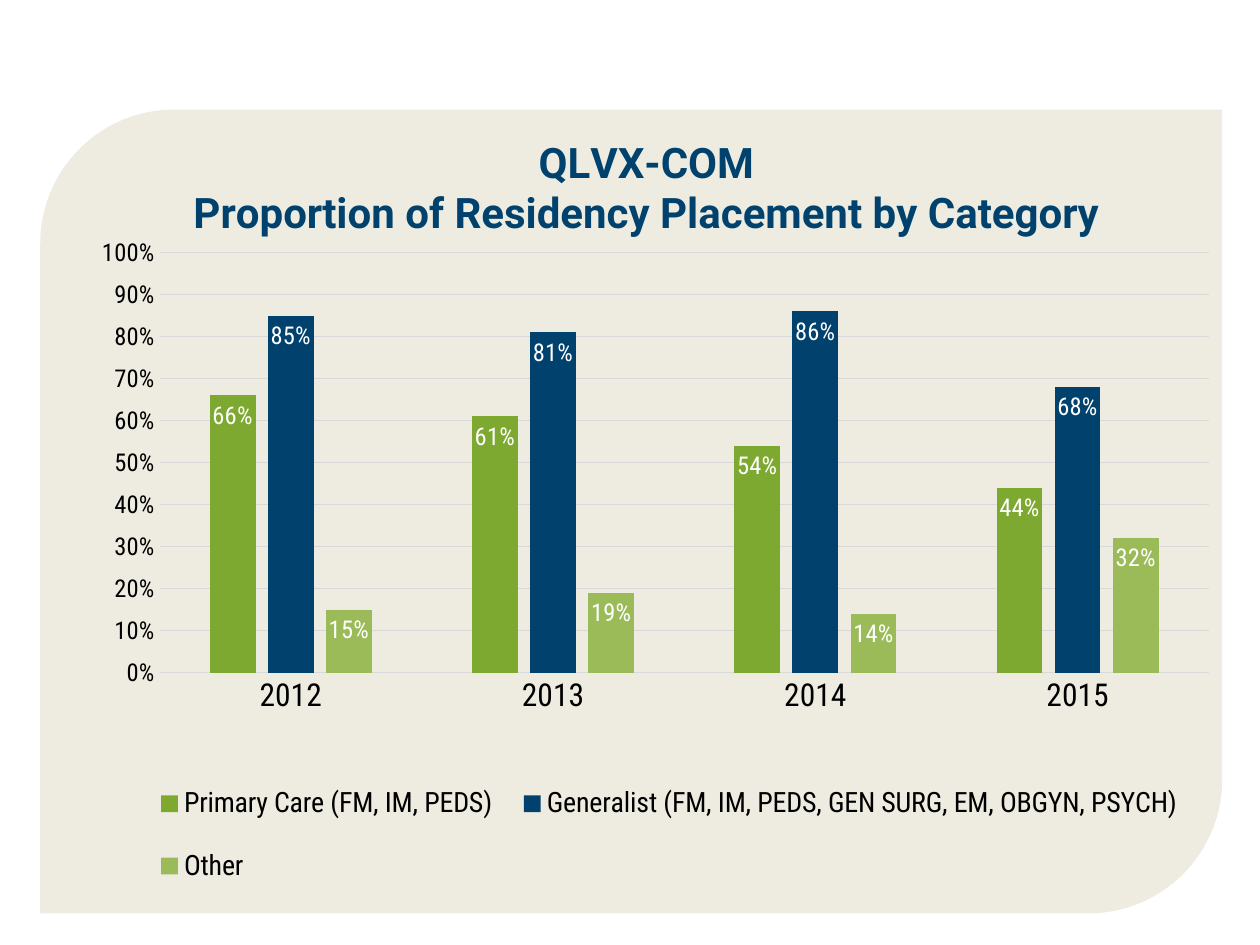
"""Build a slide with a clustered column chart of residency placement by category."""
from lxml import etree
from pptx import Presentation
from pptx.chart.data import CategoryChartData
from pptx.dml.color import RGBColor
from pptx.enum.chart import XL_CHART_TYPE, XL_LABEL_POSITION, XL_LEGEND_POSITION, XL_TICK_MARK
from pptx.enum.shapes import MSO_SHAPE
from pptx.oxml.ns import qn
from pptx.util import Pt

COLUMNS = XL_CHART_TYPE.COLUMN_CLUSTERED
INSIDE_END = XL_LABEL_POSITION.INSIDE_END
BOTTOM = XL_LEGEND_POSITION.BOTTOM
NO_TICK = XL_TICK_MARK.NONE
PANEL_SHAPE = MSO_SHAPE.ROUND_2_DIAG_RECTANGLE

CREAM = RGBColor(0xEE, 0xEC, 0xE1)
NAVY = RGBColor(0x00, 0x42, 0x6D)
GREEN = RGBColor(0x7E, 0xA9, 0x31)
LIGHT_GREEN = RGBColor(0x9B, 0xBB, 0x59)
GRID_GRAY = RGBColor(0xD9, 0xD9, 0xD9)
BLACK = RGBColor(0, 0, 0)
WHITE = RGBColor(0xFF, 0xFF, 0xFF)

TITLE_LINES = ["QLVX-COM", "Proportion of Residency Placement by Category"]
YEARS = ["2012", "2013", "2014", "2015"]
PLACEMENTS = [
    ("Primary Care (FM, IM, PEDS)", GREEN, (0.66, 0.61, 0.54, 0.44)),
    ("Generalist (FM, IM, PEDS, GEN SURG, EM, OBGYN, PSYCH)", NAVY, (0.85, 0.81, 0.86, 0.68)),
    ("Other", LIGHT_GREEN, (0.15, 0.19, 0.14, 0.32)),
]
PANEL_BOX = (23, 62.6, 675.4, 459.4)
CHART_BOX = (42.5, 71.3, 658.8, 478)
TITLE_LAYOUT = (0.1, 0.01)
PLOT_LAYOUT = (0.074, 0.153, 0.91, 0.502)
LEGEND_LAYOUT = (0.056, 0.756, 0.92, 0.186)


def format_font(font, size=14, color=BLACK, name="Roboto Condensed", bold=False):
    font.size = Pt(size)
    font.color.rgb = color
    font.name = name
    font.bold = bold


def write_line(paragraph, text, **font_format):
    run = paragraph.add_run()
    run.text = text
    format_font(run.font, **font_format)


def place_part(chart, part, box, after=None, target=None):
    part_xml = chart.element.find(".//" + qn(f"c:{part}"))
    for automatic in part_xml.findall(qn("c:layout")):
        part_xml.remove(automatic)
    layout = etree.Element(qn("c:layout"))
    manual = etree.SubElement(layout, qn("c:manualLayout"))
    settings = [("layoutTarget", target)] if target else []
    settings += [("xMode", "edge"), ("yMode", "edge")]
    settings += zip("xywh", map(str, box))
    for tag, value in settings:
        etree.SubElement(manual, qn(f"c:{tag}")).set("val", value)
    if after:
        part_xml.find(qn(f"c:{after}")).addnext(layout)
    else:
        part_xml.insert(0, layout)


def add_panel(slide):
    panel = slide.shapes.add_shape(PANEL_SHAPE, *map(Pt, PANEL_BOX))
    panel.shadow.inherit = False
    panel.fill.solid()
    panel.fill.fore_color.rgb = CREAM
    panel.line.fill.background()


def add_placement_chart(slide):
    data = CategoryChartData(number_format="0%")
    data.categories = YEARS
    for name, _, shares in PLACEMENTS:
        data.add_series(name, shares)
    chart = slide.shapes.add_chart(COLUMNS, *map(Pt, CHART_BOX), data).chart
    format_font(chart.font)
    format_title(chart)
    format_axes(chart)
    format_columns(chart)
    format_legend(chart)


def format_title(chart):
    chart.has_title = True
    chart.chart_title.include_in_layout = False
    title = chart.chart_title.text_frame
    for index, line in enumerate(TITLE_LINES):
        paragraph = title.add_paragraph() if index else title.paragraphs[0]
        write_line(paragraph, line, size=24, color=NAVY, name="Roboto", bold=True)
    place_part(chart, "title", TITLE_LAYOUT, after="tx")


def format_axes(chart):
    years, shares = chart.category_axis, chart.value_axis
    for axis, size in ((years, 18), (shares, 14)):
        axis.major_tick_mark = axis.minor_tick_mark = NO_TICK
        format_font(axis.tick_labels.font, size=size)
    shares.minimum_scale, shares.maximum_scale, shares.major_unit = 0, 1, 0.1
    shares.tick_labels.number_format = "0%"
    shares.tick_labels.number_format_is_linked = False
    shares.format.line.fill.background()
    shares.has_major_gridlines = True
    for line in (years.format.line, shares.major_gridlines.format.line):
        line.color.rgb = GRID_GRAY
        line.width = Pt(0.75)


def format_columns(chart):
    plot = chart.plots[0]
    plot.gap_width, plot.overlap, plot.vary_by_categories = 219, -27, False
    for series, (_, color, _) in zip(plot.series, PLACEMENTS):
        series.format.fill.solid()
        series.format.fill.fore_color.rgb = color
        labels = series.data_labels
        labels.show_value = True
        labels.number_format = "0%"
        labels.number_format_is_linked = False
        labels.position = INSIDE_END
        format_font(labels.font, color=WHITE)
    place_part(chart, "plotArea", PLOT_LAYOUT, target="inner")


def format_legend(chart):
    chart.has_legend = True
    legend = chart.legend
    legend.position = BOTTOM
    legend.include_in_layout = False
    format_font(legend.font, size=16)
    place_part(chart, "legend", LEGEND_LAYOUT, after="legendPos")


def main():
    presentation = Presentation()
    presentation.slide_width, presentation.slide_height = Pt(720), Pt(540)
    slide = presentation.slides.add_slide(presentation.slide_layouts[6])
    add_panel(slide)
    add_placement_chart(slide)
    presentation.save("out.pptx")


if __name__ == "__main__":
    main()
